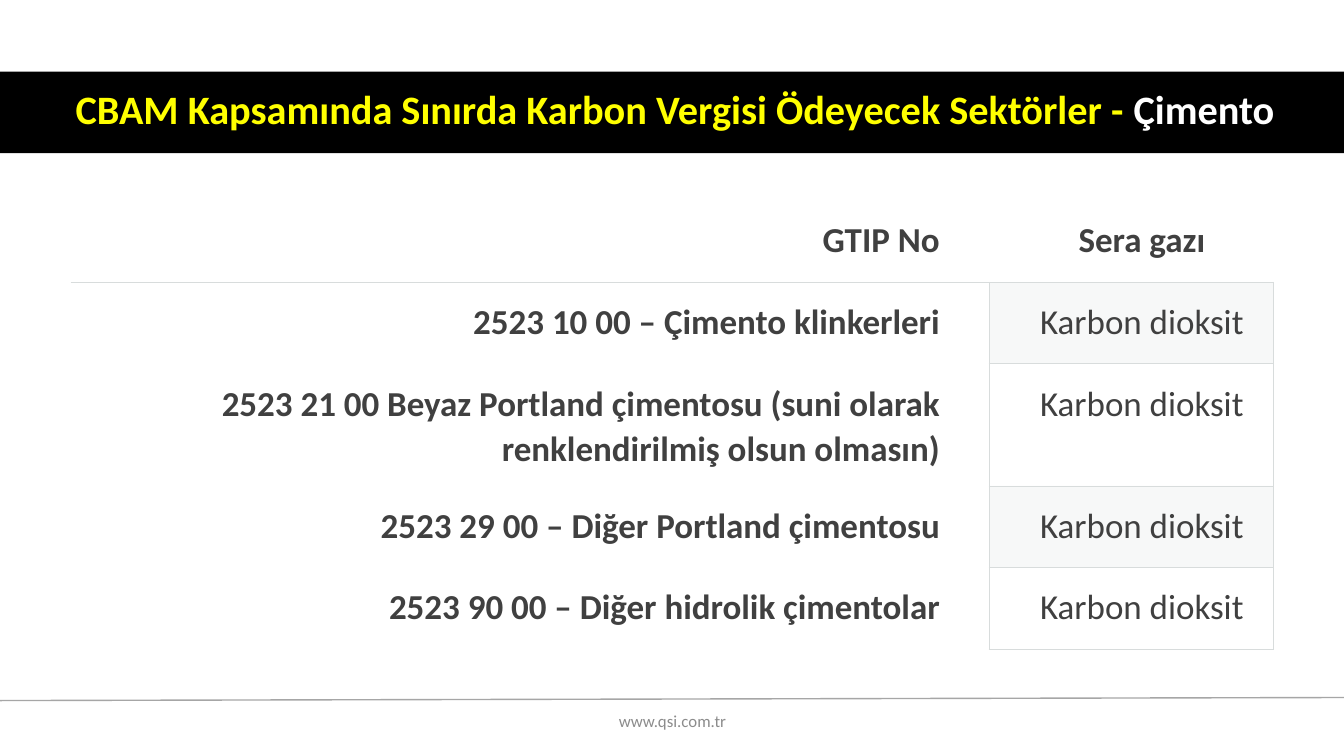
import dataclasses
import lxml.etree
import pptx
import pptx.dml.color
import pptx.enum.shapes
import pptx.enum.text
import pptx.oxml.ns
import pptx.util

Inches, Pt = pptx.util.Inches, pptx.util.Pt
Align = pptx.enum.text.PP_ALIGN
Anchor = pptx.enum.text.MSO_ANCHOR
WIDE, HIGH = 13.33, 7.5


@dataclasses.dataclass(frozen=True)
class Theme:
    font: str = "Calibri"
    band: str = "000000"
    accent: str = "FFFF00"
    light: str = "FFFFFF"
    body: str = "404040"
    muted: str = "8C8C8C"
    rule: str = "A6A6A6"
    edge: str = "D8DCDC"
    tint: str = "D8DEDC"
    head_size: float = 28.8
    cell_size: float = 25
    foot_size: float = 12


def color(code):
    return pptx.dml.color.RGBColor.from_string(code)


def add_xml(parent, tag, **attrs):
    return lxml.etree.SubElement(parent, pptx.oxml.ns.qn(tag), **attrs)


class Page:
    def __init__(self, slide, theme):
        self.slide, self.theme = slide, theme

    def place(self, x, y, w, h):
        """Turn shares of the slide's size into lengths."""
        return (Inches(x * WIDE), Inches(y * HIGH),
                Inches(w * WIDE), Inches(h * HIGH))

    def style(self, para, size, shade, align, bold=False):
        para.alignment = align
        font = para.font
        font.name, font.size, font.bold = self.theme.font, Pt(size), bold
        font.color.rgb = color(shade)

    def line(self, left, right):
        x1, y1, x2, y2 = self.place(*left, *right)
        rule = self.slide.shapes.add_connector(
            pptx.enum.shapes.MSO_CONNECTOR.STRAIGHT, x1, y1, x2, y2)
        rule.line.color.rgb = color(self.theme.rule)
        rule.line.width = Pt(1)
        add_xml(rule.element.spPr, "a:effectLst")

    def band(self, *area):
        bar = self.slide.shapes.add_shape(
            pptx.enum.shapes.MSO_SHAPE.RECTANGLE, *self.place(*area))
        bar.shadow.inherit = False
        bar.fill.solid()
        bar.fill.fore_color.rgb = color(self.theme.band)
        bar.line.fill.background()

    def title(self, parts, *area):
        """Fill the title with (text, colour) parts, in front of the band."""
        head = self.slide.shapes.title
        head.left, head.top, head.width, head.height = self.place(*area)
        head.element.getparent().append(head.element)
        frame = head.text_frame
        frame.auto_size = pptx.enum.text.MSO_AUTO_SIZE.NONE
        frame.vertical_anchor = Anchor.MIDDLE
        para = frame.paragraphs[0]
        para.line_spacing = 0.9
        self.style(para, self.theme.head_size, self.theme.accent,
                   Align.CENTER, True)
        for text, shade in parts:
            run = para.add_run()
            run.text = text
            run.font.color.rgb = color(shade)

    def footer(self, text, *area):
        box = self.slide.shapes.add_textbox(*self.place(*area))
        frame = box.text_frame
        frame.word_wrap = True
        frame.vertical_anchor = Anchor.MIDDLE
        para = frame.paragraphs[0]
        para.text = text
        para.space_after = Pt(6)
        self.style(para, self.theme.foot_size, self.theme.muted, Align.CENTER)

    def borders(self, cell, sides):
        props = cell._tc.get_or_add_tcPr()
        for side in "LRTB":
            edge = add_xml(props, "a:ln" + side, w=str(Pt(0.75)))
            if side in sides:
                fill = add_xml(edge, "a:solidFill")
                add_xml(fill, "a:srgbClr", val=self.theme.edge)
            else:
                add_xml(edge, "a:noFill")

    def shade(self, cell, tinted):
        if not tinted:
            cell.fill.background()
            return
        cell.fill.solid()
        cell.fill.fore_color.rgb = color(self.theme.tint)
        tone = cell._tc.tcPr.find(".//" + pptx.oxml.ns.qn("a:solidFill")
                                  + "[last()]")
        tone = cell._tc.tcPr.findall(pptx.oxml.ns.qn("a:solidFill"))[0][0]
        add_xml(tone, "a:alpha", val="20000")

    def cell(self, cell, text, row, col):
        gas = col == 1
        if row == 0:
            sides = "B"
        elif gas:
            sides = "LRTB"
        else:
            sides = "TR" if row == 1 else "R"
        self.borders(cell, sides)
        self.shade(cell, gas and row % 2 == 1)
        cell.margin_left = Inches(0.33)
        cell.margin_right = Inches(0.12 if gas else 0.49)
        cell.margin_top = cell.margin_bottom = Inches(0.16)
        para = cell.text_frame.paragraphs[0]
        para.text = text
        para.line_spacing = 1.07
        para.space_after = Pt(8)
        self.style(para, self.theme.cell_size, self.theme.body,
                   Align.CENTER if gas else Align.RIGHT,
                   row == 0 or not gas)

    def table(self, rows, cols, heights, *area):
        grid = self.slide.shapes.add_table(
            len(rows), len(cols), *self.place(*area)).table
        grid.first_row = grid.horz_banding = False
        for column, width in zip(grid.columns, cols):
            column.width = Inches(width * WIDE)
        for r, (texts, height) in enumerate(zip(rows, heights)):
            grid.rows[r].height = Inches(height * HIGH)
            for c, text in enumerate(texts):
                self.cell(grid.cell(r, c), text, r, c)


def main():
    deck = pptx.Presentation()
    deck.slide_width, deck.slide_height = Inches(WIDE), Inches(HIGH)
    theme = Theme()
    page = Page(deck.slides.add_slide(deck.slide_layouts[5]), theme)
    page.line((0, 6.95 / HIGH), (1, 6.92 / HIGH))
    page.band(0, 0.71 / HIGH, 1, 0.81 / HIGH)
    page.title([("CBAM Kapsamında Sınırda Karbon Vergisi Ödeyecek Sektörler - ",
                 theme.accent), ("Çimento ", theme.light)],
               0.61 / WIDE, 0.7 / HIGH, 12.26 / WIDE, 0.81 / HIGH)
    page.footer("www.qsi.com.tr",
                4.42 / WIDE, 6.95 / HIGH, 4.5 / WIDE, 0.4 / HIGH)
    goods = ["2523 10 00 – Çimento klinkerleri",
             "2523 21 00 Beyaz Portland çimentosu "
             "(suni olarak renklendirilmiş olsun olmasın)",
             "2523 29 00 – Diğer Portland çimentosu",
             "2523 90 00 – Diğer hidrolik çimentolar"]
    rows = [("GTIP No", "Sera gazı")]
    rows += [(good, "Karbon dioksit") for good in goods]
    low, tall = 0.81 / HIGH, 1.01 / HIGH
    page.table(rows, [9.11 / WIDE, 2.82 / WIDE], [low, low, tall, low, low],
               0.7 / WIDE, 1.99 / HIGH, 11.93 / WIDE, 4.25 / HIGH)
    deck.save("out.pptx")


if __name__ == "__main__":
    main()
